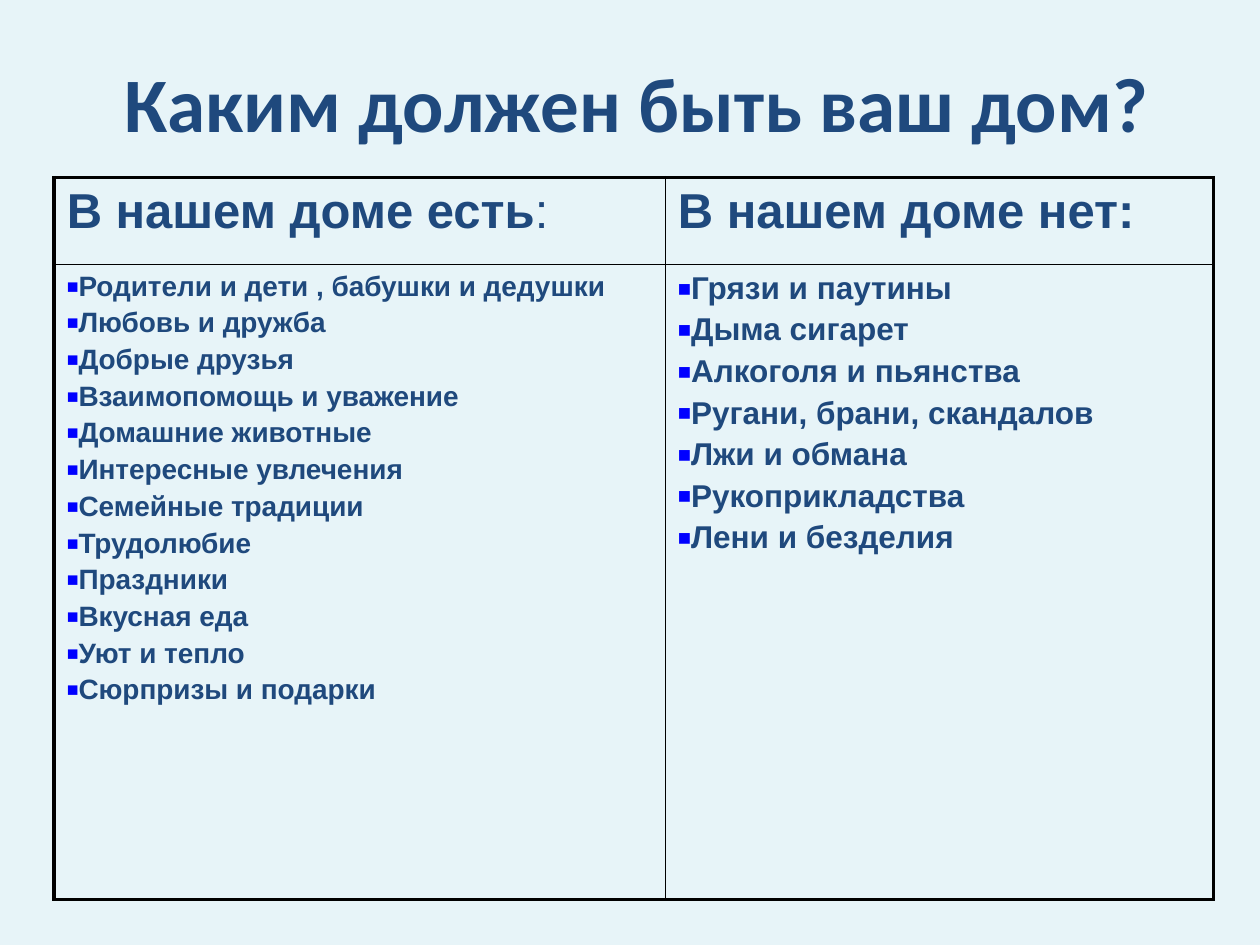
from lxml.etree import SubElement as Sub
from pptx import Presentation
from pptx.dml.color import RGBColor
from pptx.enum.text import MSO_ANCHOR, PP_ALIGN
from pptx.oxml.ns import qn
from pptx.util import Inches, Pt

NAVY = RGBColor(0x1F, 0x49, 0x7D)
BLUE = RGBColor(0x00, 0x00, 0xFF)
BLACK = RGBColor(0x00, 0x00, 0x00)
PALE = RGBColor(0xE7, 0xF4, 0xF8)
THICK, THIN = Pt(2.25), Pt(1)

HEADS = [
    [("В нашем доме есть", True), (":", False)],
    [("В нашем доме нет:", True)],
]
LISTS = [
    (16, ["Родители и дети , бабушки и дедушки", "Любовь и дружба",
          "Добрые друзья", "Взаимопомощь и уважение", "Домашние животные",
          "Интересные увлечения", "Семейные традиции", "Трудолюбие",
          "Праздники", "Вкусная еда", "Уют и тепло", "Сюрпризы и подарки"]),
    (18, ["Грязи и паутины", "Дыма сигарет", "Алкоголя и пьянства",
          "Ругани, брани, скандалов", "Лжи и обмана", "Рукоприкладства",
          "Лени и безделия"]),
]


def add_run(para, text, size, bold=True, name="Arial"):
    run = para.add_run()
    run.text = text
    look = {"size": Pt(size), "bold": bold, "name": name}
    for key, value in look.items():
        setattr(run.font, key, value)
    run.font.color.rgb = NAVY


def set_space(para, bullet=False):
    """Put 20% space before the paragraph and, if asked, a square bullet."""
    props = para._p.get_or_add_pPr()
    space = Sub(props, qn("a:spcBef"))
    Sub(space, qn("a:spcPct"), val="20000")
    if bullet:
        color = Sub(props, qn("a:buClr"))
        Sub(color, qn("a:srgbClr"), val=str(BLUE))
        Sub(props, qn("a:buSzPct"), val="70000")
        Sub(props, qn("a:buFont"), typeface="Arial")
        Sub(props, qn("a:buChar"), char="■")


prs = Presentation()
prs.slide_width, prs.slide_height = Inches(10), Inches(7.5)
slide = prs.slides.add_slide(prs.slide_layouts[6])
slide.background.fill.solid()
slide.background.fill.fore_color.rgb = PALE

# Title
title = slide.shapes.add_textbox(
    Inches(0.47), Inches(0), Inches(9.17), Inches(1.62)).text_frame
title.word_wrap = True
title.vertical_anchor = MSO_ANCHOR.MIDDLE
title.paragraphs[0].alignment = PP_ALIGN.CENTER
add_run(title.paragraphs[0], "Каким должен быть ваш дом?", 44, name="Calibri")

# Table grid
table = slide.shapes.add_table(
    2, 2, Inches(0.43), Inches(1.41), Inches(9.2), Inches(5.73)).table
table.first_row = table.horz_banding = False
for col, width in zip(table.columns, (4.85, 4.35)):
    col.width = Inches(width)
for row, height in zip(table.rows, (0.69, 5.04)):
    row.height = Inches(height)

# Thick outer frame, thin inner lines
for r in range(2):
    for c in range(2):
        cell = table.cell(r, c)
        props = cell._tc.get_or_add_tcPr()
        outer = {"lnL": c == 0, "lnR": c == 1, "lnT": r == 0, "lnB": r == 1}
        for side, edge in outer.items():
            line = Sub(props, qn(f"a:{side}"), w=str(THICK if edge else THIN))
            fill = Sub(line, qn("a:solidFill"))
            Sub(fill, qn("a:srgbClr"), val=str(BLACK))
        cell.fill.background()

# Column text
for c, (head, (size, items)) in enumerate(zip(HEADS, LISTS)):
    para = table.cell(0, c).text_frame.paragraphs[0]
    set_space(para)
    for text, bold in head:
        add_run(para, text, 28, bold)
    frame = table.cell(1, c).text_frame
    for i, item in enumerate(items):
        para = frame.add_paragraph() if i else frame.paragraphs[0]
        set_space(para, bullet=True)
        add_run(para, item, size)

prs.save("out.pptx")
